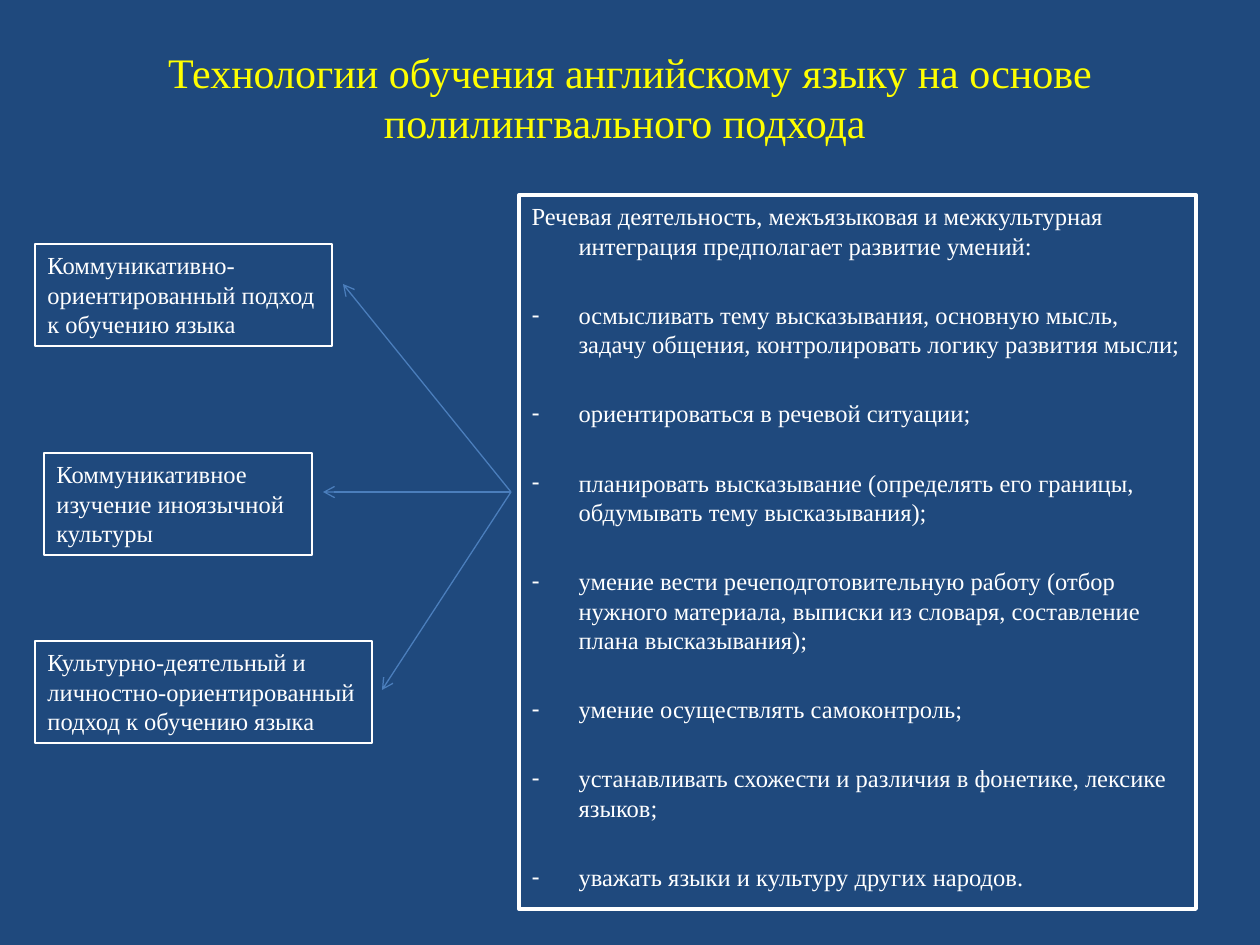
from typing import NamedTuple

from lxml import etree
from pptx import Presentation
from pptx.dml.color import RGBColor
from pptx.enum.shapes import MSO_CONNECTOR
from pptx.enum.text import MSO_ANCHOR, MSO_AUTO_SIZE, PP_ALIGN
from pptx.oxml.ns import qn
from pptx.util import Emu, Pt

STRAIGHT = MSO_CONNECTOR.STRAIGHT
MIDDLE, TOP = MSO_ANCHOR.MIDDLE, MSO_ANCHOR.TOP
NO_FIT, GROW = MSO_AUTO_SIZE.NONE, MSO_AUTO_SIZE.SHAPE_TO_FIT_TEXT
CENTER, LEFT = PP_ALIGN.CENTER, PP_ALIGN.LEFT

FONT = "Times New Roman"
NAVY, YELLOW, WHITE, BLUE = "1F497D", "FFFF00", "FFFFFF", "4B7EBC"
INDENT = 47


class Box(NamedTuple):
    left: int
    top: int
    width: int
    height: int


class Method(NamedTuple):
    text: str
    box: Box
    tip: tuple[int, int]


TITLE = "Технологии обучения английскому языку на основе полилингвального подхода "
INTRO = "Речевая деятельность, межъязыковая и межкультурная интеграция предполагает развитие умений:"
SKILLS = [
    "осмысливать тему высказывания, основную мысль, задачу общения, контролировать логику развития мысли;",
    "ориентироваться в речевой ситуации;",
    "планировать высказывание (определять его границы, обдумывать тему высказывания);",
    "умение вести речеподготовительную работу (отбор нужного материала, выписки из словаря, составление плана высказывания);",
    "умение осуществлять самоконтроль;",
    "устанавливать схожести и различия в фонетике, лексике языков;",
    "уважать языки и культуру других народов.",
]
METHODS = [
    Method("Коммуникативно-ориентированный подход к обучению языка",
           Box(35, 244, 297, 102), (343, 284)),
    Method("Коммуникативное изучение иноязычной культуры",
           Box(44, 453, 268, 102), (323, 492)),
    Method("Культурно-деятельный и личностно-ориентированный подход к обучению языка",
           Box(35, 641, 337, 102), (382, 690)),
]
HUB = (511, 492)


def px(n: int) -> Emu:
    return Emu(round(n * 914400 / 126))


def color(code: str) -> RGBColor:
    return RGBColor.from_string(code)


def place(shape, box: Box) -> None:
    shape.left, shape.top, shape.width, shape.height = map(px, box)


def style(para, size: int, code: str) -> None:
    para.font.name = FONT
    para.font.size = Pt(size)
    para.font.color.rgb = color(code)


def outline(shape, code: str, width: float) -> None:
    shape.line.color.rgb = color(code)
    shape.line.width = Pt(width)


def hang(para, mark: str = "") -> None:
    """Give the paragraph a hanging indent, with a bullet if one is named."""
    props = para._p.get_or_add_pPr()
    props.set("marL", str(px(INDENT)))
    props.set("indent", str(-px(INDENT)))
    if mark:
        etree.SubElement(props, qn("a:buChar"), char=mark)
    else:
        etree.SubElement(props, qn("a:buNone"))


def add_title(slide) -> None:
    title = slide.shapes.title
    place(title, Box(63, 27, 1134, 139))
    frame = title.text_frame
    frame.text = TITLE
    frame.auto_size = NO_FIT
    frame.vertical_anchor = MIDDLE
    para = frame.paragraphs[0]
    para.alignment = CENTER
    style(para, 24, YELLOW)


def add_skills(slide) -> None:
    body = slide.placeholders[1]
    place(body, Box(519, 195, 677, 714))
    outline(body, WHITE, 2.25)
    frame = body.text_frame
    frame.text = "\n".join([INTRO, *SKILLS])
    frame.auto_size = NO_FIT
    frame.vertical_anchor = TOP
    for i, para in enumerate(frame.paragraphs):
        hang(para, "-" if i else "")
        para.alignment = LEFT
        para.space_before = Pt(22.7 if i else 0)
        style(para, 14, WHITE)


def add_method(slide, method: Method) -> None:
    label = slide.shapes.add_textbox(*map(px, method.box))
    outline(label, WHITE, 1.5)
    frame = label.text_frame
    frame.word_wrap = True
    frame.auto_size = GROW
    frame.text = method.text
    style(frame.paragraphs[0], 14, WHITE)


def add_arrow(slide, start: tuple[int, int], end: tuple[int, int]) -> None:
    arrow = slide.shapes.add_connector(STRAIGHT, *map(px, start + end))
    outline(arrow, BLUE, 0.75)
    etree.SubElement(arrow.line._get_or_add_ln(), qn("a:tailEnd"), type="arrow")
    etree.SubElement(arrow._element.spPr, qn("a:effectLst"))


def main() -> None:
    deck = Presentation()
    deck.slide_width, deck.slide_height = px(1260), px(945)
    slide = deck.slides.add_slide(deck.slide_layouts[1])
    fill = slide.background.fill
    fill.solid()
    fill.fore_color.rgb = color(NAVY)
    add_title(slide)
    add_skills(slide)
    for method in METHODS:
        add_method(slide, method)
    for method in METHODS:
        add_arrow(slide, HUB, method.tip)
    deck.save("out.pptx")


if __name__ == "__main__":
    main()
